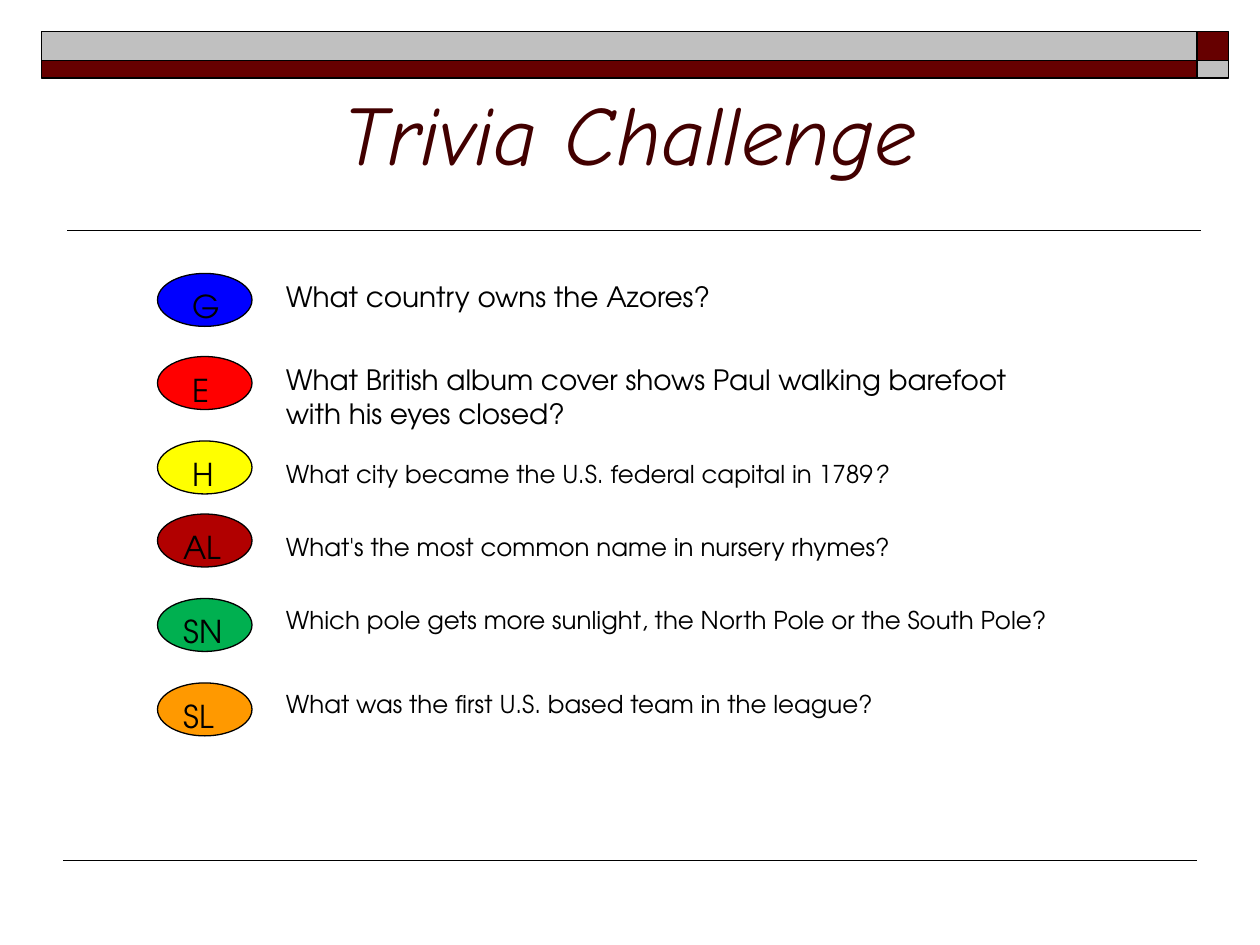
"""Build a trivia slide with six coloured category ovals and their questions."""
from pptx import Presentation
from pptx.dml.color import RGBColor as RGB
from pptx.enum.shapes import MSO_CONNECTOR as Link, MSO_SHAPE as Kind
from pptx.enum.text import MSO_ANCHOR as Anchor, MSO_AUTO_SIZE as Fit, PP_ALIGN as Align
from pptx.oxml.ns import qn
from pptx.util import Inches, Pt
from lxml import etree

HUES = {
    "ink": "000000", "title": "420000", "maroon": "660000", "grey": "C0C0C0",
    "blue": "0000FF", "red": "FF0000", "yellow": "FFFF00",
    "brick": "B10000", "green": "00B050", "orange": "FF9900",
}


def write(shape, text, size=14, font="TeX Gyre Adventor", hue="ink",
          align=Align.LEFT, anchor=Anchor.TOP, slant=False, fit=Fit.NONE, tail=""):
    frame = shape.text_frame
    frame.word_wrap = True
    frame.auto_size = fit
    frame.vertical_anchor = anchor
    para = frame.paragraphs[0]
    para.alignment = align
    for words, tilt in ((text, slant), (tail, True)):
        if words:
            run = para.add_run()
            run.text = words
            run.font.name = font
            run.font.size = Pt(size)
            run.font.italic = tilt
            run.font.color.rgb = RGB.from_string(HUES[hue])


def draw(kind, left, top, width, height, hue, weight):
    shape = slide.shapes.add_shape(
        kind, Inches(left), Inches(top), Inches(width), Inches(height))
    shape.shadow.inherit = False
    shape.fill.solid()
    shape.fill.fore_color.rgb = RGB.from_string(HUES[hue])
    shape.line.color.rgb = RGB.from_string(HUES["ink"])
    shape.line.width = Pt(weight)
    return shape


deck = Presentation()
deck.slide_width, deck.slide_height = Inches(10), Inches(7.5)
slide = deck.slides.add_slide(deck.slide_layouts[5])

for left, width, hues in ((9.5, 0.25, ("maroon", "grey")), (0.33, 9.17, ("grey", "maroon"))):
    for top, height, hue in zip((0.25, 0.48), (0.23, 0.14), hues):
        draw(Kind.RECTANGLE, left, top, width, height, hue, 1)

for start, end, y, weight in ((9.53, 0.53, 1.83, 1), (0.5, 9.5, 6.83, 0.75)):
    rule = slide.shapes.add_connector(
        Link.STRAIGHT, Inches(start), Inches(y), Inches(end), Inches(y))
    rule.line.color.rgb = RGB.from_string(HUES["ink"])
    rule.line.width = Pt(weight)
    etree.SubElement(rule._element.spPr, qn("a:effectLst"))

title = slide.shapes.title
title.left, title.top = Inches(0.5), Inches(0.25)
title.width, title.height = Inches(9), Inches(1.25)
write(title, "Trivia Challenge", size=48, font="Comic Neue", hue="title",
      align=Align.CENTER, anchor=Anchor.BOTTOM, slant=True)

quiz = [
    (" G", "blue", 2.17, 2.17, 6.17, 0.37, 16, "What country owns the Azores?", ""),
    (" E", "red", 2.83, 2.83, 6.25, 0.64, 16,
     "What British album cover shows Paul walking barefoot with his eyes closed?", ""),
    (" H", "yellow", 3.5, 3.59, 5.17, 0.34, 14,
     "What city became the U.S. federal capital in 1789", "?"),
    ("AL", "brick", 4.08, 4.17, 7.08, 0.34, 14,
     "What's the most common name in nursery rhymes?", ""),
    ("SN", "green", 4.75, 4.75, 6.5, 0.34, 14,
     "Which pole gets more sunlight, the North Pole or the South Pole?", ""),
    ("SL", "orange", 5.42, 5.42, 7.17, 0.34, 14,
     "What was the first U.S. based team in the league?", ""),
]
for label, hue, top, y, width, height, size, ask, tail in quiz:
    oval = draw(Kind.OVAL, 1.25, top, 0.75, 0.42, hue, 0.75)
    write(oval, label, size=18)
    box = slide.shapes.add_textbox(Inches(2.17), Inches(y), Inches(width), Inches(height))
    write(box, ask, size=size, fit=Fit.SHAPE_TO_FIT_TEXT, tail=tail)

deck.save("out.pptx")
